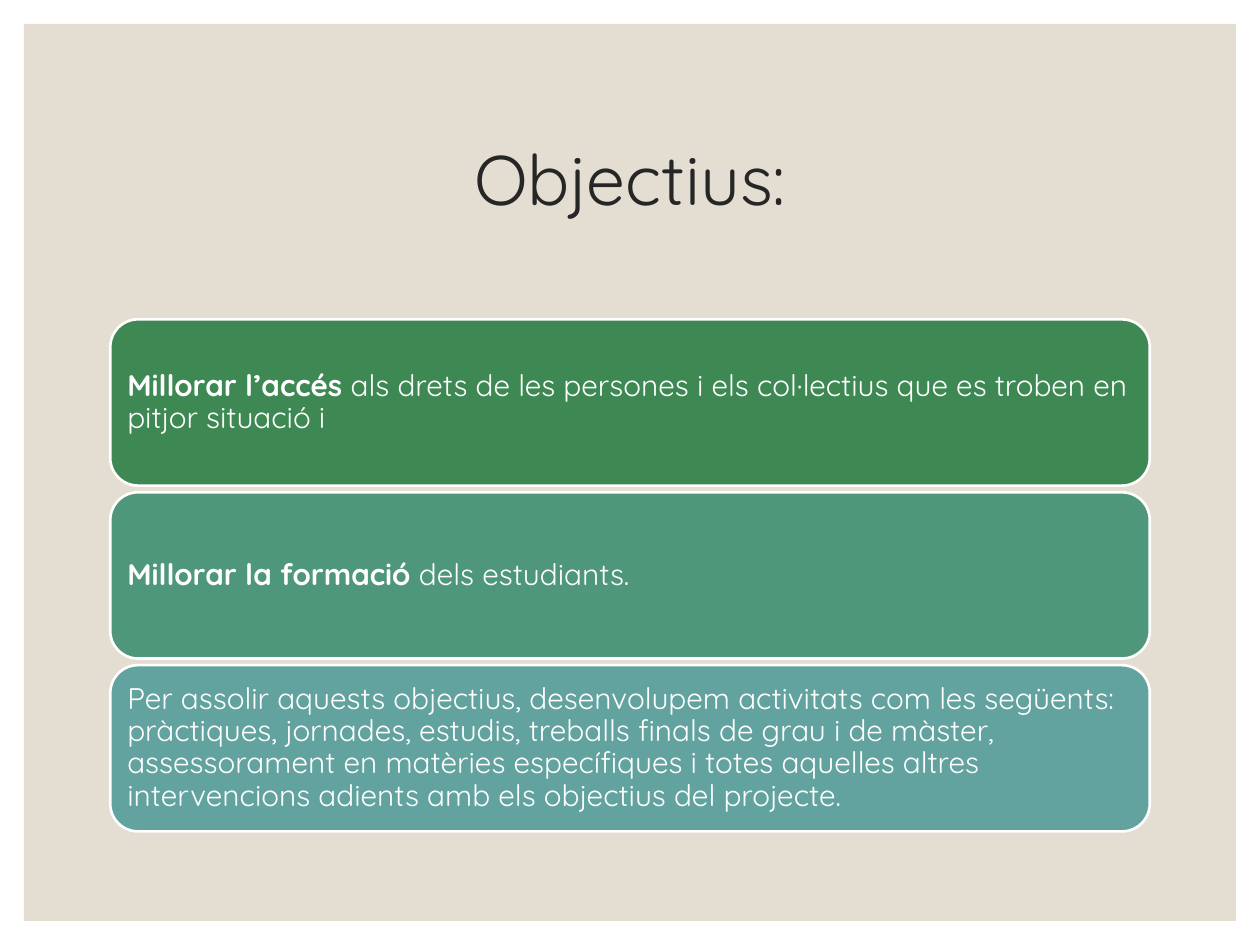
from pptx import Presentation
from pptx.dml.color import RGBColor
from pptx.enum.shapes import MSO_SHAPE as Shape
from pptx.enum.text import MSO_ANCHOR as Anchor, PP_ALIGN as Align
from pptx.util import Pt

FONT = "Quicksand"
TITLE = "Objectius:"
# Fill, bold lead, plain text
GOALS = [
    ("3E8853", "Millorar l’accés",
     "\u00a0als drets de les persones i els col·lectius que es troben en "
     "pitjor situació i"),
    ("4E977B", "Millorar la formació", "\u00a0dels estudiants."),
    ("62A39F", "",
     "Per assolir aquests objectius, desenvolupem activitats com les "
     "següents: pràctiques, jornades, estudis, treballs finals de grau i de "
     "màster, assessorament en matèries específiques i totes aquelles altres "
     "intervencions adients amb els objectius del projecte."),
]
LEFT, WIDE = 63, 594
TOP, HIGH, STEP = 182.5, 95, 98.8


def color(code):
    return RGBColor.from_string(code)


def add_run(para, text, size, code, bold=False):
    run = para.add_run()
    run.text = text
    font = run.font
    font.name, font.size, font.bold = FONT, Pt(size), bold
    font.color.rgb = color(code)


def add_box(slide, kind, place, fill):
    box = slide.shapes.add_shape(kind, *map(Pt, place))
    box.shadow.inherit = False
    box.fill.solid()
    box.fill.fore_color.rgb = color(fill)
    return box


def set_frame(frame, align):
    frame.word_wrap = True
    frame.vertical_anchor = Anchor.MIDDLE
    para = frame.paragraphs[0]
    para.alignment = align
    para.line_spacing = 0.9
    return para


def main():
    deck = Presentation()
    deck.slide_width, deck.slide_height = Pt(720), Pt(540)
    slide = deck.slides.add_slide(deck.slide_layouts[6])

    # Backdrop inside a white margin
    panel = add_box(slide, Shape.RECTANGLE, (13.7, 13.7, 692.6, 512.6), "E3DED1")
    panel.line.fill.background()

    # Title
    title = slide.shapes.add_textbox(Pt(LEFT), Pt(50.4), Pt(WIDE), Pt(108))
    add_run(set_frame(title.text_frame, Align.CENTER), TITLE, 40, "262626")

    # Stack of goals
    for row, (fill, lead, rest) in enumerate(GOALS):
        place = (LEFT, TOP + row * STEP, WIDE, HIGH)
        box = add_box(slide, Shape.ROUNDED_RECTANGLE, place, fill)
        box.line.color.rgb = color("FFFFFF")
        box.line.width = Pt(1.5)
        frame = box.text_frame
        frame.margin_left = frame.margin_right = Pt(5.1)
        frame.margin_top = frame.margin_bottom = Pt(5.1)
        para = set_frame(frame, Align.LEFT)
        if lead:
            add_run(para, lead, 17, "FFFFFF", True)
        add_run(para, rest, 17, "FFFFFF")

    deck.save("out.pptx")


if __name__ == "__main__":
    main()
